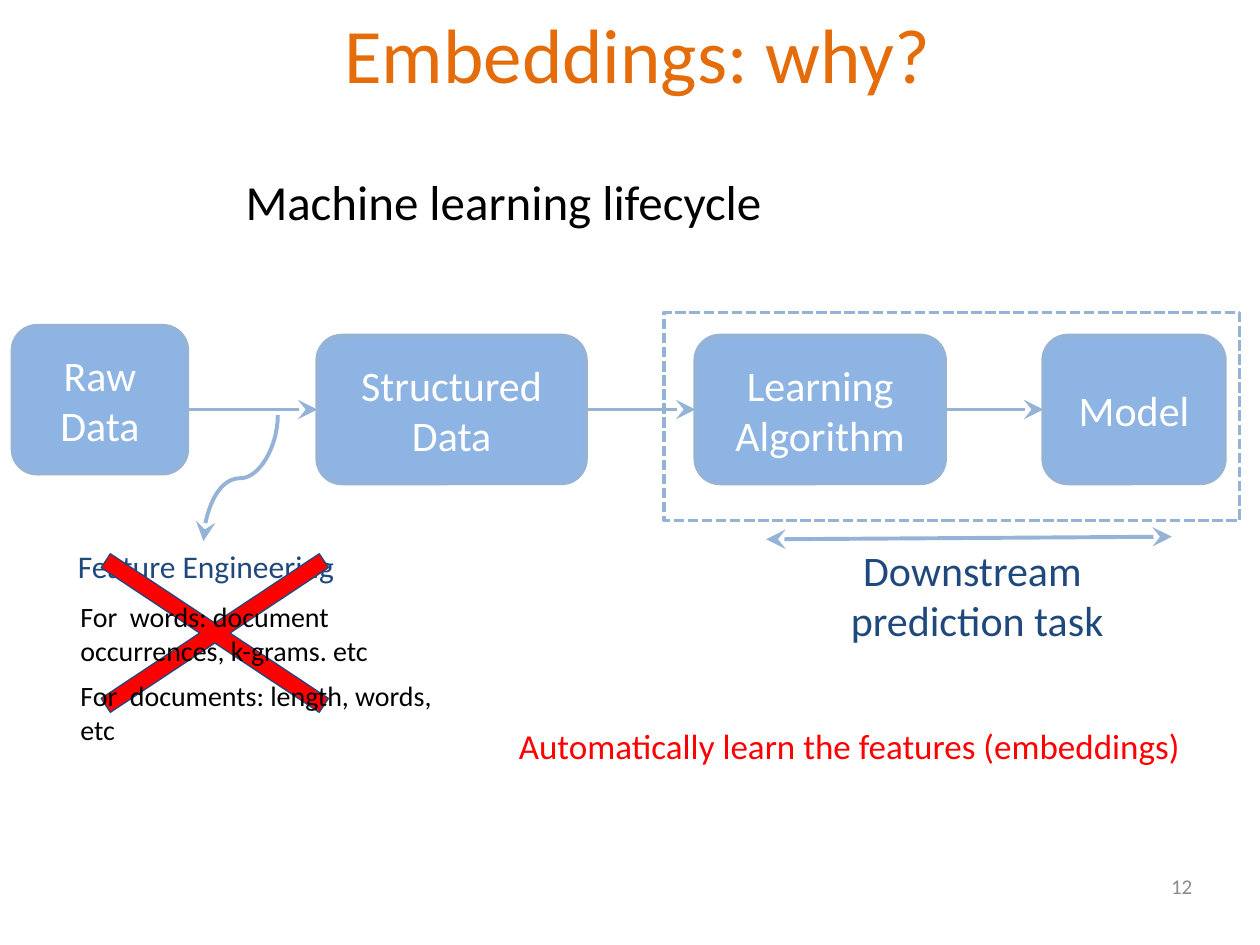
"""Build the slide on why embeddings matter in the machine learning lifecycle."""
from lxml import etree
from pptx import Presentation
from pptx.dml.color import RGBColor
from pptx.enum.dml import MSO_LINE
from pptx.enum.shapes import MSO_CONNECTOR, MSO_SHAPE
from pptx.enum.text import MSO_ANCHOR, PP_ALIGN
from pptx.oxml.ns import qn
from pptx.util import Pt

LEFT, CENTER, RIGHT, JUSTIFY = PP_ALIGN.LEFT, PP_ALIGN.CENTER, PP_ALIGN.RIGHT, PP_ALIGN.JUSTIFY
TOP, MIDDLE = MSO_ANCHOR.TOP, MSO_ANCHOR.MIDDLE
STRAIGHT, CURVE = MSO_CONNECTOR.STRAIGHT, MSO_CONNECTOR.CURVE
ROUNDED, RECTANGLE, CROSS = MSO_SHAPE.ROUNDED_RECTANGLE, MSO_SHAPE.RECTANGLE, MSO_SHAPE.MATH_MULTIPLY
DASHED = MSO_LINE.SQUARE_DOT
COLORS = {
    "title": "E46C0A", "box": "8EB4E3", "line": "95B3D7", "navy": "1F497D",
    "red": "FF0000", "black": "000000", "white": "FFFFFF", "gray": "8C8C8C",
}


def write(shape, text, size, color, align, anchor=TOP, inset=3.6):
    frame = shape.text_frame
    frame.word_wrap = True
    frame.vertical_anchor = anchor
    frame.margin_left = frame.margin_right = Pt(7.2)
    frame.margin_top = frame.margin_bottom = Pt(inset)
    paragraph = frame.paragraphs[0]
    paragraph.text = text
    paragraph.alignment = align
    for run in paragraph.runs:
        run.font.name = "Calibri"
        run.font.size = Pt(size)
        run.font.color.rgb = RGBColor.from_string(COLORS[color])


def add_arrow(kind, x1, y1, x2, y2, ends=("tailEnd",)):
    arrow = slide.shapes.add_connector(kind, Pt(x1), Pt(y1), Pt(x2), Pt(y2))
    arrow.line.color.rgb = RGBColor.from_string(COLORS["line"])
    arrow.line.width = Pt(2.25)
    outline = arrow.line._get_or_add_ln()
    for end in ends:
        etree.SubElement(outline, qn("a:" + end), type="stealth", w="lg", len="lg")
    etree.SubElement(arrow._element.spPr, qn("a:effectLst"))
    return arrow


prs = Presentation()
prs.slide_width, prs.slide_height = Pt(720), Pt(540)
slide = prs.slides.add_slide(prs.slide_layouts[6])

stages = []
for label, left, top, width in [
    ("Raw Data", 7.2, 186.2, 99.8),
    ("Structured Data", 181.4, 191.8, 153.4),
    ("Learning Algorithm", 397.4, 191.8, 142.6),
    ("Model", 596.2, 191.8, 103.7),
]:
    stage = slide.shapes.add_shape(ROUNDED, Pt(left), Pt(top), Pt(width), Pt(84.4))
    stage.shadow.inherit = False
    stage.fill.solid()
    stage.fill.fore_color.rgb = RGBColor.from_string(COLORS["box"])
    stage.line.color.rgb = RGBColor.from_string(COLORS["line"])
    stage.line.width = Pt(2.25)
    write(stage, label, 24, "white", CENTER, MIDDLE, 7.2)
    stages.append(stage)

raw_data, structured_data, learning, model = stages
raw_flow = add_arrow(STRAIGHT, 108, 234, 181.4, 234)
raw_flow.end_connect(structured_data, 1)
for source, target in [(structured_data, learning), (learning, model)]:
    flow = add_arrow(STRAIGHT, 0, 234, 10, 234)
    flow.begin_connect(source, 3)
    flow.end_connect(target, 1)

feature_branch = add_arrow(CURVE, 101.5, 252, 173.5, 294.5)
feature_branch._element.spPr.find(qn("a:xfrm")).set("rot", "5400000")
add_arrow(STRAIGHT, 437.8, 308.2, 669.6, 306.7, ("headEnd", "tailEnd"))

downstream_frame = slide.shapes.add_shape(RECTANGLE, Pt(379.4), Pt(178.6), Pt(329), Pt(118.8))
downstream_frame.shadow.inherit = False
downstream_frame.fill.background()
downstream_frame.line.color.rgb = RGBColor.from_string(COLORS["line"])
downstream_frame.line.width = Pt(2)
downstream_frame.line.dash_style = DASHED

feature_label = slide.shapes.add_textbox(Pt(7.9), Pt(305.3), Pt(219.6), Pt(74.2))
write(feature_label, "Feature Engineering", 18, "navy", CENTER, inset=7.2)

cross_out = slide.shapes.add_shape(CROSS, Pt(2.9), Pt(282.2), Pt(239.8), Pt(159.1))
cross_out.shadow.inherit = False
cross_out.adjustments[0] = 0.06
cross_out.fill.solid()
cross_out.fill.fore_color.rgb = RGBColor.from_string(COLORS["red"])
cross_out.line.color.rgb = RGBColor.from_string(COLORS["navy"])
cross_out.line.width = Pt(0.75)

for text, left, top, width, height, size, color, align, anchor, inset in [
    ("Embeddings: why?", 40.3, 0, 648, 90, 44, "title", CENTER, TOP, 3.6),
    ("Machine learning lifecycle", 133.2, 94.3, 478.8, 41, 28, "black", LEFT, TOP, 3.6),
    ("Downstream \vprediction task", 430.6, 303.8, 255.6, 84.2, 24, "navy", CENTER, TOP, 7.2),
    ("For  words: document occurrences, k-grams. etc", 38.9, 339.1, 219.6, 46.1, 16, "black", LEFT, TOP, 3.6),
    ("For  documents: length, words, etc", 38.9, 384.5, 219.6, 46.1, 16, "black", LEFT, TOP, 3.6),
    ("Automatically learn the features (embeddings)", 289.4, 406.8, 402.5, 38.9, 20, "red", JUSTIFY, TOP, 7.2),
    ("12", 520.6, 491.8, 167.8, 28.8, 12, "gray", RIGHT, MIDDLE, 3.6),
]:
    caption = slide.shapes.add_textbox(Pt(left), Pt(top), Pt(width), Pt(height))
    write(caption, text, size, color, align, anchor, inset)

prs.save("out.pptx")
